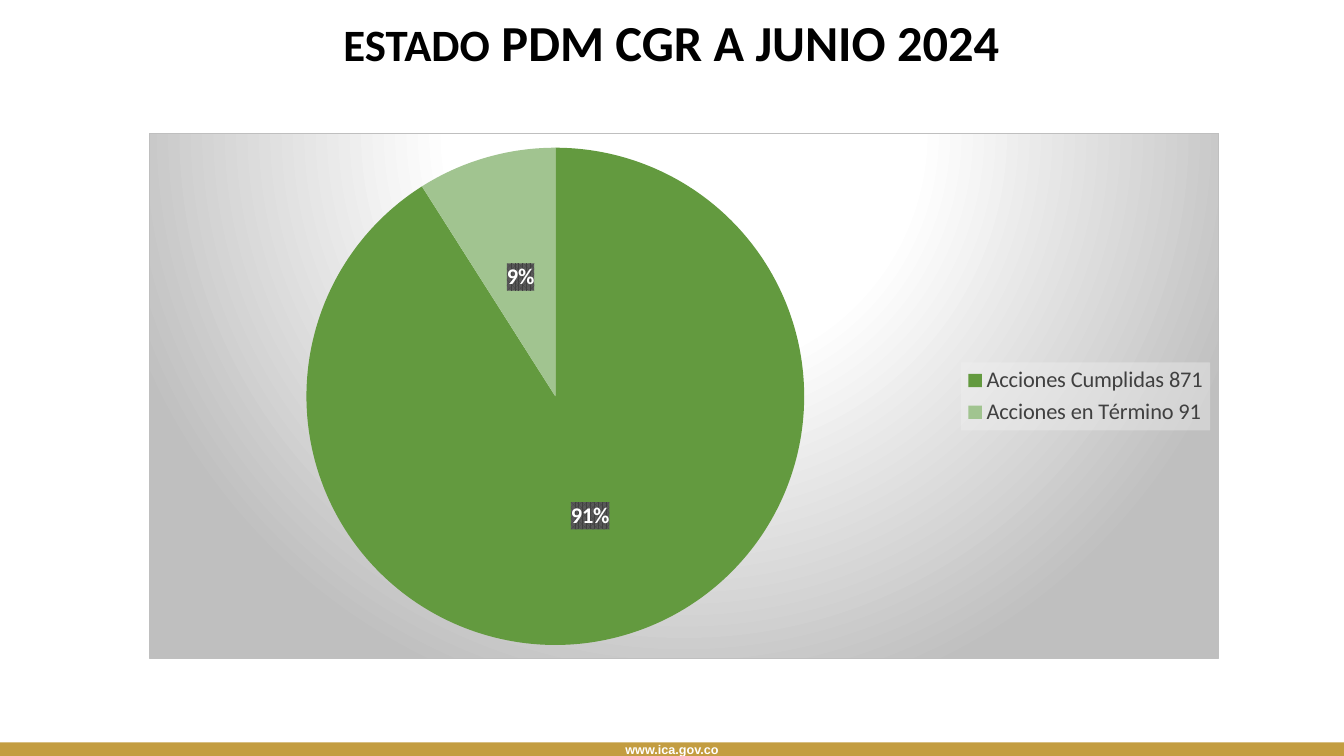
"""Builds the pie chart slide on the state of the PDM CGR actions."""
from lxml import etree
from pptx import Presentation
from pptx.chart.data import CategoryChartData
from pptx.dml.color import RGBColor
from pptx.enum.chart import XL_CHART_TYPE, XL_LABEL_POSITION, XL_LEGEND_POSITION
from pptx.enum.shapes import MSO_SHAPE
from pptx.enum.text import MSO_ANCHOR, PP_ALIGN
from pptx.oxml.ns import qn
from pptx.util import Pt

PX = 9525
PIE = XL_CHART_TYPE.PIE
LABEL_CENTER = XL_LABEL_POSITION.CENTER
LEGEND_RIGHT = XL_LEGEND_POSITION.RIGHT
RECT = MSO_SHAPE.RECTANGLE
TOP, MIDDLE = MSO_ANCHOR.TOP, MSO_ANCHOR.MIDDLE
CENTER = PP_ALIGN.CENTER

BLACK = RGBColor(0x00, 0x00, 0x00)
WHITE = RGBColor(0xFF, 0xFF, 0xFF)
GRAY = RGBColor(0x40, 0x40, 0x40)
MID_GRAY = RGBColor(0x59, 0x59, 0x59)
PALE_GRAY = RGBColor(0xF2, 0xF2, 0xF2)
SILVER = RGBColor(0xBF, 0xBF, 0xBF)
GOLD = RGBColor(0xC3, 0x9D, 0x41)
GREEN = RGBColor(0x63, 0x9A, 0x3F)
LIGHT_GREEN = RGBColor(0xA1, 0xC4, 0x90)

SLICES = [("Acciones Cumplidas 871", 91, GREEN), ("Acciones en Término 91", 9, LIGHT_GREEN)]
TITLE = [("ESTADO", 32), (" PDM CGR A JUNIO 2024", 36)]

C_NS = "http://schemas.openxmlformats.org/drawingml/2006/chart"
A_NS = "http://schemas.openxmlformats.org/drawingml/2006/main"
STOPS = "".join(
    f'<a:gs pos="{pos * 1000}"><a:srgbClr val="{color}"/></a:gs>'
    for pos, color in [(0, WHITE), (39, WHITE), (100, SILVER)]
)
CHART_FILL = (
    f'<a:gradFill><a:gsLst>{STOPS}</a:gsLst><a:path path="circle">'
    '<a:fillToRect l="50000" t="-80000" r="50000" b="180000"/></a:path></a:gradFill>'
    f'<a:ln w="9525"><a:solidFill><a:srgbClr val="{SILVER}"/></a:solidFill></a:ln>'
)
LEGEND_FILL = (
    f'<a:solidFill><a:srgbClr val="{PALE_GRAY}"><a:alpha val="39000"/></a:srgbClr></a:solidFill>'
    '<a:ln><a:noFill/></a:ln>'
)
LABEL_FILL = (
    f'<a:pattFill prst="pct75"><a:fgClr><a:srgbClr val="{GRAY}"/></a:fgClr>'
    f'<a:bgClr><a:srgbClr val="{MID_GRAY}"/></a:bgClr></a:pattFill><a:ln><a:noFill/></a:ln>'
)


def px(*lengths):
    """Turn pixel lengths into EMU."""
    return [n * PX for n in lengths]


def set_font(font, color, size, name="Calibri", bold=False):
    """Format a font."""
    for key, value in {"name": name, "size": Pt(size), "bold": bold}.items():
        setattr(font, key, value)
    font.color.rgb = color


def set_frame(tf, **values):
    """Set the attributes of a text frame."""
    for key, value in values.items():
        setattr(tf, key, value)


def set_chart_fill(element, fill):
    """Put shape properties just before the text properties of a chart part."""
    xml = f'<c:spPr xmlns:c="{C_NS}" xmlns:a="{A_NS}">{fill}</c:spPr>'
    element.find(qn("c:txPr")).addprevious(etree.fromstring(xml))


def add_footer(slide):
    """Add the gold band with the web address."""
    sp = slide.shapes.add_shape(RECT, *px(0, 707, 1280, 14))
    sp.shadow.inherit = False
    sp.fill.solid()
    sp.fill.fore_color.rgb = GOLD
    sp.line.fill.background()
    tf = sp.text_frame
    set_frame(tf, margin_top=0, margin_bottom=0, vertical_anchor=MIDDLE)
    p = tf.paragraphs[0]
    p.alignment = CENTER
    r = p.add_run()
    r.text = "www.ica.gov.co"
    set_font(r.font, WHITE, 9, "Arial", True)


def add_title(slide):
    """Place and write the title."""
    sp = slide.shapes.title
    sp.left, sp.top, sp.width, sp.height = px(113, 12, 1053, 75)
    set_frame(sp.text_frame, vertical_anchor=TOP, word_wrap=True)
    p = sp.text_frame.paragraphs[0]
    p.alignment, p.line_spacing = CENTER, 0.9
    for text, size in TITLE:
        r = p.add_run()
        r.text = text
        set_font(r.font, BLACK, size, bold=True)


def add_pie(slide):
    """Add the pie chart with its legend and percentages."""
    names, values, colors = zip(*SLICES)
    data = CategoryChartData()
    data.categories = names
    data.add_series("Series 1", values)
    chart = slide.shapes.add_chart(PIE, *px(142, 127, 1019, 501), data).chart
    chart.has_title = False
    set_font(chart.font, BLACK, 10)
    set_chart_fill(chart.font and chart._chartSpace, CHART_FILL)

    chart.has_legend = True
    legend = chart.legend
    legend.position, legend.include_in_layout = LEGEND_RIGHT, False
    set_font(legend.font, GRAY, 16)
    set_chart_fill(legend._element, LEGEND_FILL)

    chart.plots[0].vary_by_categories = True
    series = chart.plots[0].series[0]
    for i, color in enumerate(colors):
        fill = series.points[i].format.fill
        fill.solid()
        fill.fore_color.rgb = color

    labels = series.data_labels
    settings = {"show_percentage": True, "show_value": False, "number_format": "0%",
                "number_format_is_linked": False, "position": LABEL_CENTER}
    for key, value in settings.items():
        setattr(labels, key, value)
    set_font(labels.font, WHITE, 16, bold=True)
    set_chart_fill(labels._element, LABEL_FILL)


def main():
    """Build and save the slide."""
    prs = Presentation()
    prs.slide_width, prs.slide_height = px(1280, 720)
    slide = prs.slides.add_slide(prs.slide_layouts[5])
    add_footer(slide)
    add_pie(slide)
    add_title(slide)
    prs.save("out.pptx")


if __name__ == "__main__":
    main()
